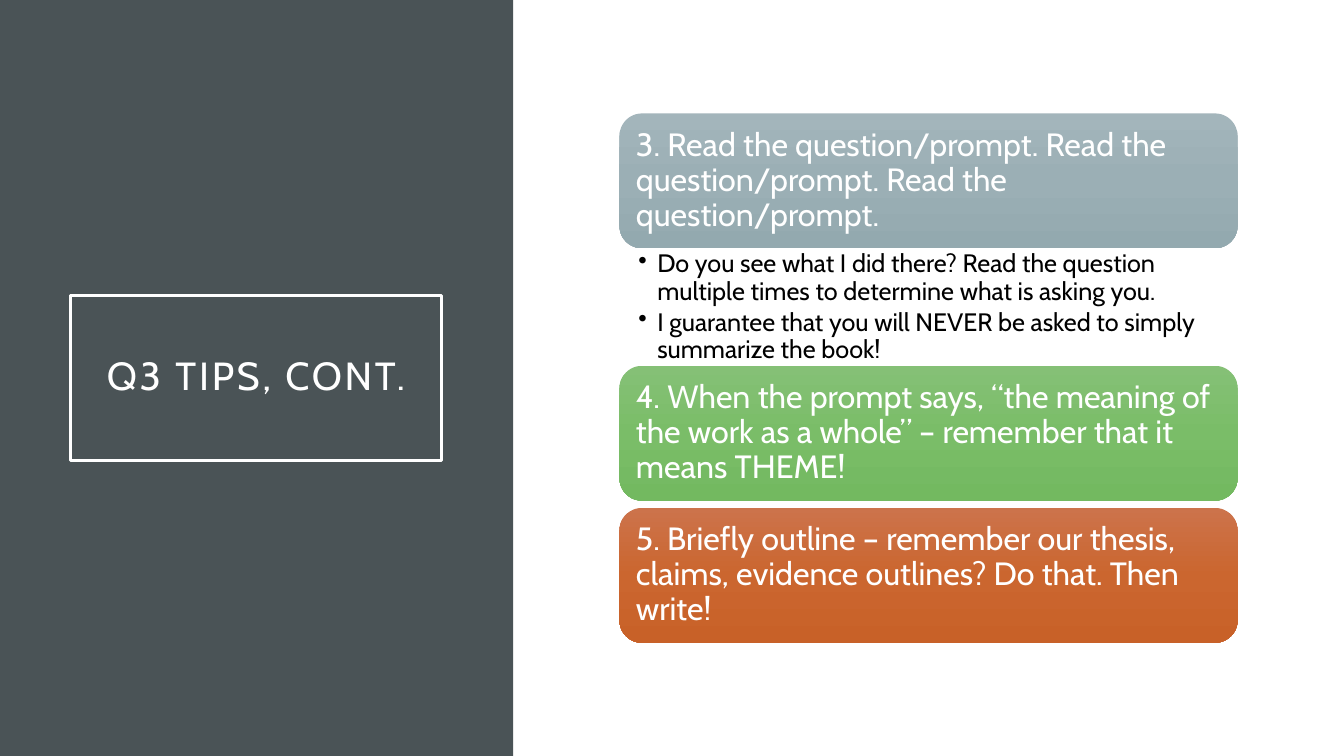
from copy import deepcopy
from lxml.etree import SubElement
from pptx import Presentation
from pptx.dml.color import RGBColor
from pptx.enum.shapes import MSO_SHAPE
from pptx.enum.text import MSO_ANCHOR, PP_ALIGN
from pptx.oxml.ns import qn
from pptx.util import Pt

TIPS = [
    ("3. Read the question/prompt. Read the question/prompt. Read the question/prompt.",
     ["A3B5BB", "9BAFB5", "93A9AF"],
     ["Do you see what I did there? Read the question multiple times "
      "to determine what is asking you.",
      "I guarantee that you will NEVER be asked to simply summarize the book!"]),
    ("4. When the prompt says, “the meaning of the work as a whole” – remember "
     "that it means THEME!",
     ["85C076", "7ABD68", "73B960"], []),
    ("5. Briefly outline – remember our thesis, claims, evidence outlines? "
     "Do that. Then write!",
     ["CC734B", "CB662F", "C86128"], []),
]


def color(code):
    return RGBColor.from_string(code)


def style(para, size, code):
    para.line_spacing = 0.9
    para.font.name = "Cabin"
    para.font.size = Pt(size)
    para.font.color.rgb = color(code)


def inset(frame, side, edge):
    frame.word_wrap = True
    frame.margin_left = frame.margin_right = Pt(side)
    frame.margin_top = frame.margin_bottom = Pt(edge)


def block(slide, kind, left, top, width, height):
    shape = slide.shapes.add_shape(kind, Pt(left), Pt(top), Pt(width), Pt(height))
    shape.shadow.inherit = False
    shape.line.fill.background()
    return shape


def shade(fill, codes):
    """Fill from top to bottom through three colours."""
    fill.gradient()
    fill.gradient_angle = 270
    first = fill.gradient_stops[0]._gs
    first.addnext(deepcopy(first))
    for stop, code, place in zip(fill.gradient_stops, codes, (0, 0.5, 1)):
        stop.color.rgb = color(code)
        stop.position = place


def panel(slide, left, top, width, height):
    # Dark side panel
    side = block(slide, MSO_SHAPE.RECTANGLE, left, top, width, height)
    side.fill.solid()
    side.fill.fore_color.rgb = color("4A5356")

    # Framed title
    title = block(slide, MSO_SHAPE.RECTANGLE, left + 50.4, top + 211, 265, 118)
    title.fill.background()
    title.line.fill.solid()
    title.line.fill.fore_color.rgb = color("FFFFFF")
    title.line.width = Pt(2.5)
    frame = title.text_frame
    inset(frame, 14.4, 14.4)
    frame.vertical_anchor = MSO_ANCHOR.MIDDLE
    para = frame.paragraphs[0]
    para.text = "Q3 TIPS, CONT."
    para.alignment = PP_ALIGN.CENTER
    style(para, 28, "FFFFFF")
    para.runs[0].font._element.set("spc", "200")


def card(slide, text, codes, left, top, width, height):
    shape = block(slide, MSO_SHAPE.ROUNDED_RECTANGLE, left, top, width, height)
    shade(shape.fill, codes)
    frame = shape.text_frame
    inset(frame, 7.2, 7.2)
    frame.vertical_anchor = MSO_ANCHOR.MIDDLE
    para = frame.paragraphs[0]
    para.text = text
    para.alignment = PP_ALIGN.LEFT
    style(para, 23, "FFFFFF")


def notes(slide, lines, left, top, width, height):
    box = slide.shapes.add_textbox(Pt(left), Pt(top), Pt(width), Pt(height))
    frame = box.text_frame
    inset(frame, 13.5, 2.1)
    for i, line in enumerate(lines):
        para = frame.add_paragraph() if i else frame.paragraphs[0]
        para.text = line
        para.level = 1
        props = para._p.get_or_add_pPr()
        props.set("marL", str(Pt(13.5)))
        props.set("indent", str(-Pt(13.5)))
        SubElement(props, qn("a:buChar")).set("char", "•")
        para.space_after = Pt(3)
        style(para, 18, "000000")


def tips(slide, left, top, width):
    tall, gap, body = 96.3, 5.2, 84
    for text, codes, lines in TIPS:
        card(slide, text, codes, left, top, width, tall)
        top += tall
        if lines:
            notes(slide, lines, left, top, width, body)
            top += body
        else:
            top += gap


def main():
    deck = Presentation()
    deck.slide_width, deck.slide_height = Pt(960), Pt(540)
    slide = deck.slides.add_slide(deck.slide_layouts[6])
    panel(slide, 0, 0, 366.5, 540)
    tips(slide, 442.5, 81, 441.5)
    deck.save("out.pptx")


if __name__ == "__main__":
    main()
